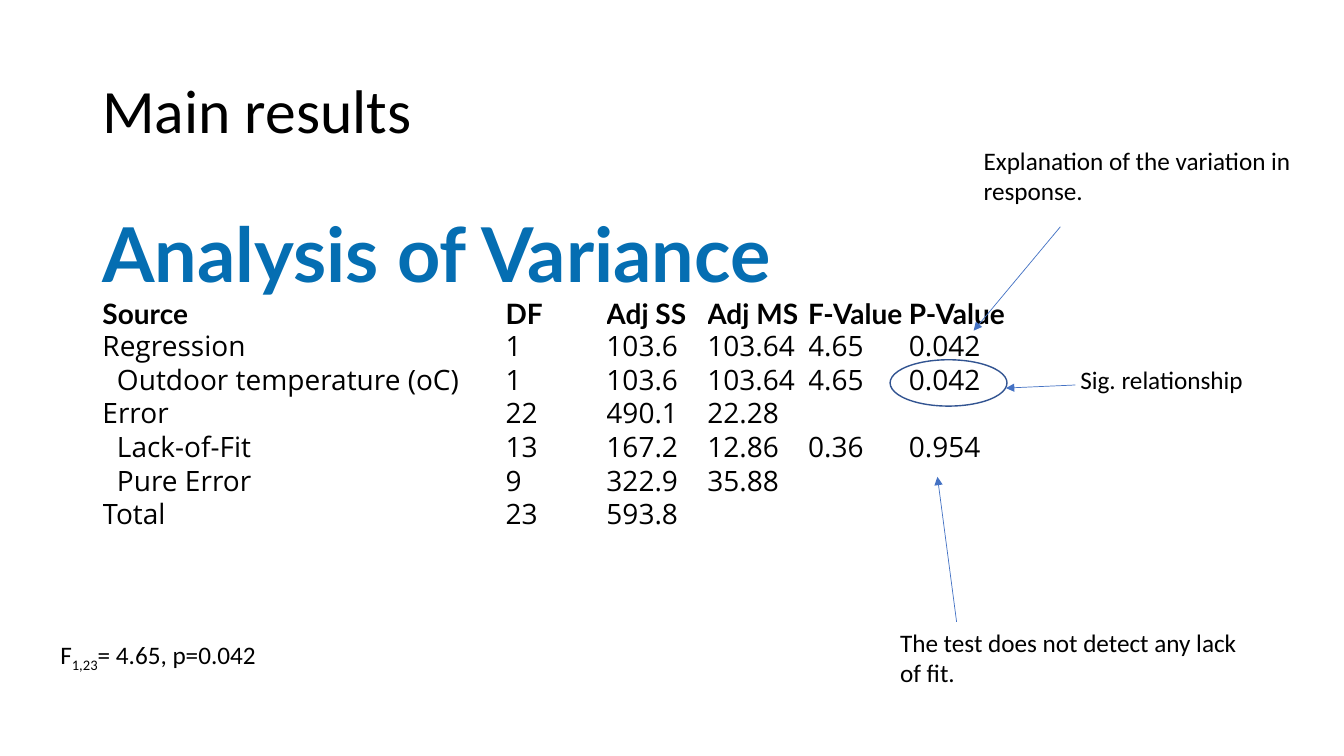
from lxml import etree
from pptx import Presentation
from pptx.dml.color import RGBColor
from pptx.enum.shapes import MSO_CONNECTOR, MSO_SHAPE
from pptx.enum.text import MSO_ANCHOR
from pptx.oxml.ns import qn
from pptx.util import Pt

STRAIGHT = MSO_CONNECTOR.STRAIGHT
OVAL = MSO_SHAPE.OVAL
TOP = MSO_ANCHOR.TOP
MIDDLE = MSO_ANCHOR.MIDDLE

BLACK = RGBColor(0x00, 0x00, 0x00)
HEADING_BLUE = RGBColor(0x05, 0x6E, 0xB2)
ARROW_BLUE = RGBColor(0x44, 0x72, 0xC4)
RING_BLUE = RGBColor(0x32, 0x54, 0x91)

ROW_HEIGHT = 24.05
COLUMN_WIDTHS = [288, 72, 72, 72, 72, 72]
INDENT = 10.4
HEADERS = ["Source", "DF", "Adj SS", "Adj MS", "F-Value", "P-Value"]
RESULTS = [
    (0, ["Regression", "1", "103.6", "103.64", "4.65", "0.042"]),
    (INDENT, ["Outdoor temperature (oC)", "1", "103.6", "103.64", "4.65", "0.042"]),
    (0, ["Error", "22", "490.1", "22.28", "", ""]),
    (INDENT, ["Lack-of-Fit", "13", "167.2", "12.86", "0.36", "0.954"]),
    (INDENT, ["Pure Error", "9", "322.9", "35.88", "", ""]),
    (0, ["Total", "23", "593.8", "", "", ""]),
]


def add_text(paragraph, text, size=18, font="Calibri", color=BLACK, bold=False, baseline=None):
    """Append one formatted run to a paragraph."""
    run = paragraph.add_run()
    run.text = text
    run.font.size = Pt(size)
    run.font.name = font
    run.font.bold = bold
    run.font.color.rgb = color
    if baseline is not None:
        run.font._element.set("baseline", str(baseline))


def add_text_box(slide, box, anchor=TOP):
    """Add a wrapping text box and return its first paragraph."""
    frame = slide.shapes.add_textbox(*map(Pt, box)).text_frame
    frame.word_wrap = True
    frame.vertical_anchor = anchor
    return frame.paragraphs[0]


def add_title(slide, box):
    """Place the slide title."""
    paragraph = add_text_box(slide, box, MIDDLE)
    paragraph.line_spacing = 0.9
    add_text(paragraph, "Main results", size=44)


def fill_cell(cell, text, indent, **text_format):
    """Write one table cell without fill or padding."""
    cell.fill.background()
    cell.margin_left = Pt(indent)
    cell.margin_right = cell.margin_top = cell.margin_bottom = 0
    paragraph = cell.text_frame.paragraphs[0]
    paragraph.line_spacing = Pt(24)
    add_text(paragraph, text, size=20, **text_format)


def add_variance_table(slide, box):
    """Place the heading and the analysis of variance table beneath it."""
    left, top, width, heading_height = box
    heading = add_text_box(slide, (left, top, width, heading_height))
    add_text(heading, "Analysis of Variance", size=54, font="Lato", color=HEADING_BLUE, bold=True)

    rows = [(0, HEADERS)] + RESULTS
    table = slide.shapes.add_table(
        len(rows), len(HEADERS), Pt(left + 7.2), Pt(top + heading_height),
        Pt(sum(COLUMN_WIDTHS)), Pt(ROW_HEIGHT * len(rows))).table
    table.first_row = False
    table.horz_banding = False
    for column, column_width in zip(table.columns, COLUMN_WIDTHS):
        column.width = Pt(column_width)
    for row_index, (indent, values) in enumerate(rows):
        table.rows[row_index].height = Pt(ROW_HEIGHT)
        is_header = row_index == 0
        for column_index, value in enumerate(values):
            fill_cell(table.cell(row_index, column_index), value,
                      indent if column_index == 0 else 0,
                      font="Lato" if is_header else "Open Sans", bold=is_header)


def add_arrow(slide, start, end):
    """Draw a thin arrow from start to end."""
    connector = slide.shapes.add_connector(STRAIGHT, *map(Pt, start + end))
    connector.line.color.rgb = ARROW_BLUE
    connector.line.width = Pt(0.5)
    etree.SubElement(connector.line._get_or_add_ln(), qn("a:tailEnd"), type="triangle")
    etree.SubElement(connector._element.spPr, qn("a:effectLst"))


def add_note(slide, box, text, arrow_start, arrow_end):
    """Place a remark and the arrow to the value it explains."""
    add_text(add_text_box(slide, box), text)
    add_arrow(slide, arrow_start, arrow_end)


def add_ring(slide, box):
    """Circle the significant value."""
    ring = slide.shapes.add_shape(OVAL, *map(Pt, box))
    ring.shadow.inherit = False
    ring.fill.background()
    ring.line.color.rgb = RING_BLUE
    ring.line.width = Pt(1)


def add_test_result(slide, box):
    """Place the F statistic with its degrees of freedom as a subscript."""
    paragraph = add_text_box(slide, box)
    add_text(paragraph, "F")
    add_text(paragraph, "1,23", baseline=-25000)
    add_text(paragraph, "= 4.65, p=0.042")


def main():
    """Build and save the slide."""
    presentation = Presentation()
    presentation.slide_width = Pt(960)
    presentation.slide_height = Pt(540)
    slide = presentation.slides.add_slide(presentation.slide_layouts[6])

    add_title(slide, (66, 28.8, 828, 104.4))
    add_variance_table(slide, (66, 144, 811.4, 68.4))
    add_note(slide, (695.5, 100.1, 247.7, 51.1), "Explanation of the variation in response.",
             (757.4, 162), (695.5, 236.2))
    add_note(slide, (635.8, 444.2, 257.8, 51.1), "The test does not detect any lack of fit.",
             (683.3, 444.2), (669.6, 340.6))
    add_ring(slide, (635.8, 257, 83.5, 33.1))
    add_note(slide, (764.6, 257, 166.3, 28.8), "Sig. relationship",
             (768.2, 275), (718.6, 277.2))
    add_test_result(slide, (36, 452.9, 561.6, 28.8))
    presentation.save("out.pptx")


if __name__ == "__main__":
    main()
